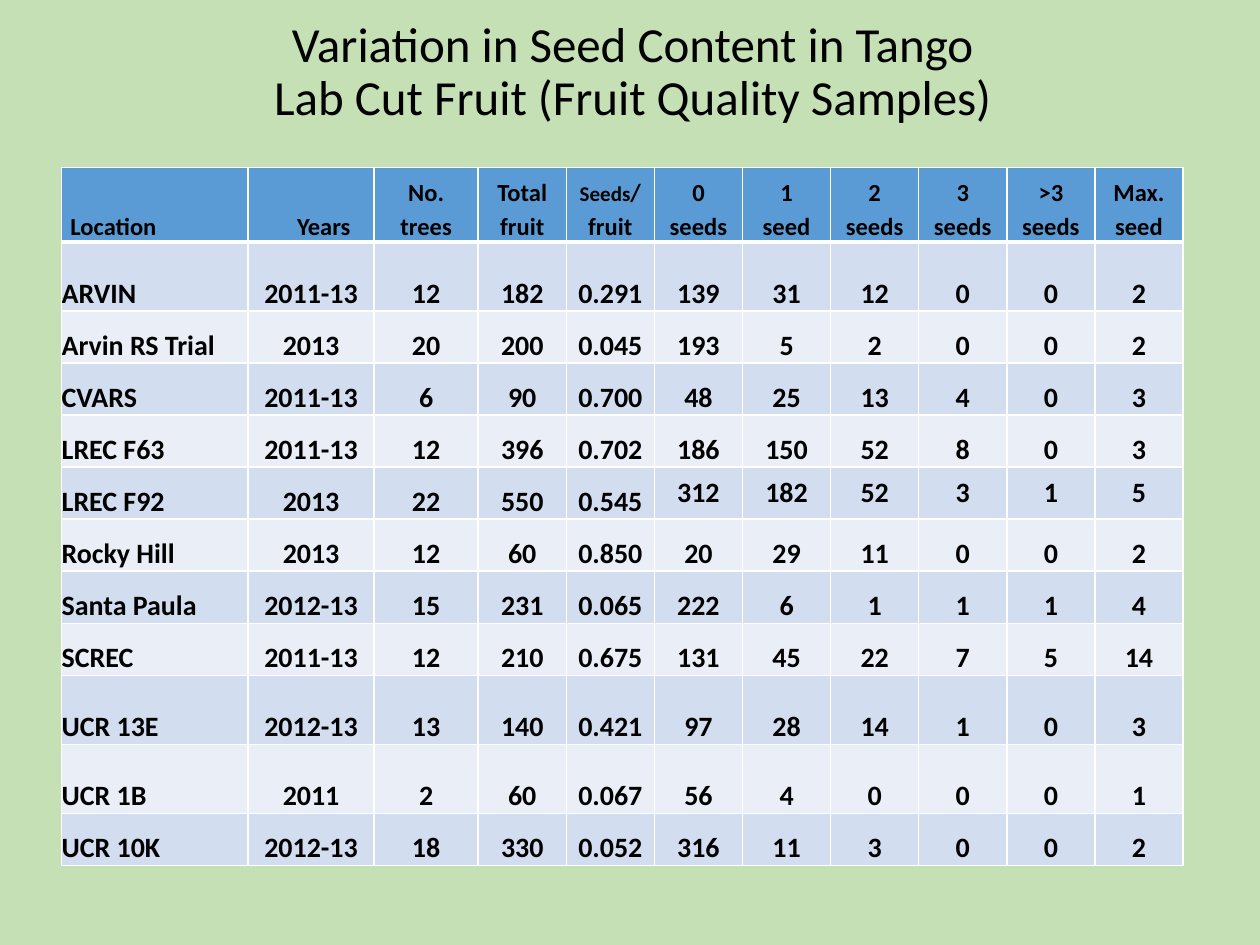
from dataclasses import dataclass

from lxml import etree
from pptx import Presentation
from pptx.dml.color import RGBColor
from pptx.enum.text import MSO_ANCHOR, MSO_AUTO_SIZE, PP_ALIGN
from pptx.oxml.ns import qn
from pptx.util import Pt

BOTTOM, MIDDLE = MSO_ANCHOR.BOTTOM, MSO_ANCHOR.MIDDLE
LEFT, CENTER = PP_ALIGN.LEFT, PP_ALIGN.CENTER
NO_AUTOFIT = MSO_AUTO_SIZE.NONE
TITLE_ONLY = 5


@dataclass(frozen=True)
class Theme:
    font: str = "Calibri"
    background: str = "C5E0B4"
    text: str = "000000"
    header: str = "5B9BD5"
    bands: tuple = ("D2DEEF", "EAEFF7")
    border: str = "FFFFFF"
    title_size: int = 28
    header_size: int = 14
    small_header_size: int = 12
    body_size: int = 16


THEME = Theme()

TITLE = "Variation in Seed Content in Tango\nLab Cut Fruit (Fruit Quality Samples)"
HEADERS = [
    "Location", "Years", "No. trees", "Total\nfruit", "Seeds/\nfruit", "0 seeds",
    "1\nseed", "2 seeds", "3 seeds", ">3 seeds", "Max. seed",
]
SAMPLES = [
    ("ARVIN", "2011-13", "12", "182", "0.291", "139", "31", "12", "0", "0", "2"),
    ("Arvin RS Trial", "2013", "20", "200", "0.045", "193", "5", "2", "0", "0", "2"),
    ("CVARS", "2011-13", "6", "90", "0.700", "48", "25", "13", "4", "0", "3"),
    ("LREC F63", "2011-13", "12", "396", "0.702", "186", "150", "52", "8", "0", "3"),
    ("LREC F92", "2013", "22", "550", "0.545", "312", "182", "52", "3", "1", "5"),
    ("Rocky Hill", "2013", "12", "60", "0.850", "20", "29", "11", "0", "0", "2"),
    ("Santa Paula", "2012-13", "15", "231", "0.065", "222", "6", "1", "1", "1", "4"),
    ("SCREC", "2011-13", "12", "210", "0.675", "131", "45", "22", "7", "5", "14"),
    ("UCR 13E", "2012-13", "13", "140", "0.421", "97", "28", "14", "1", "0", "3"),
    ("UCR 1B", "2011", "2", "60", "0.067", "56", "4", "0", "0", "0", "1"),
    ("UCR 10K", "2012-13", "18", "330", "0.052", "316", "11", "3", "0", "0", "2"),
]
COLUMN_WIDTHS = [106.5, 72, 59.5] + [50.35] * 8
HEADER_HEIGHT, ROW_HEIGHT, TALL_ROW_HEIGHT = 42.5, 29.75, 39.5
TALL_LOCATIONS = {"ARVIN", "UCR 13E", "UCR 1B"}
MIDDLE_LOCATION, FIRST_COUNT_COLUMN = "LREC F92", 5
YEARS_INDENT = 23


def add_text(paragraph, text, size, bold=False):
    """Add runs to the paragraph, with a line break at each newline."""
    for number, line in enumerate(text.split("\n")):
        if number:
            paragraph.add_line_break()
        if not line:
            continue
        run = paragraph.add_run()
        run.text = line
        run.font.name = THEME.font
        run.font.size = Pt(size)
        run.font.bold = bold
        run.font.color.rgb = RGBColor.from_string(THEME.text)


def add_title(slide):
    title = slide.shapes.title
    title.left, title.top, title.width, title.height = Pt(51), Pt(0), Pt(621), Pt(83.5)
    frame = title.text_frame
    frame.auto_size = NO_AUTOFIT
    frame.word_wrap = True
    frame.vertical_anchor = MIDDLE
    paragraph = frame.paragraphs[0]
    paragraph.alignment = CENTER
    paragraph.line_spacing = 0.9
    add_text(paragraph, TITLE, THEME.title_size)


def set_borders(cell, top=1, bottom=1):
    properties = cell._tc.get_or_add_tcPr()
    widths = {"lnL": 1, "lnR": 1, "lnT": top, "lnB": bottom}
    for position, (side, width) in enumerate(widths.items()):
        line = etree.Element(qn(f"a:{side}"), w=str(Pt(width)))
        fill = etree.SubElement(line, qn("a:solidFill"))
        etree.SubElement(fill, qn("a:srgbClr"), val=THEME.border)
        properties.insert(position, line)


def format_cell(cell, fill, alignment, anchor=BOTTOM, side_margin=0):
    """Format the cell and return its paragraph."""
    cell.fill.solid()
    cell.fill.fore_color.rgb = RGBColor.from_string(fill)
    cell.vertical_anchor = anchor
    cell.margin_left = cell.margin_right = Pt(side_margin)
    cell.margin_top = cell.margin_bottom = Pt(0)
    paragraph = cell.text_frame.paragraphs[0]
    paragraph.alignment = alignment
    return paragraph


def fill_header(table):
    for column, label in enumerate(HEADERS):
        cell = table.cell(0, column)
        alignment = LEFT if column < 2 else CENTER
        paragraph = format_cell(cell, THEME.header, alignment, side_margin=5)
        paragraph.line_spacing = 1.15
        if label == "Years":
            paragraph._p.get_or_add_pPr().set("marL", str(Pt(YEARS_INDENT)))
        if label.startswith("Seeds"):
            add_text(paragraph, "Seeds", THEME.small_header_size, bold=True)
            label = label.removeprefix("Seeds")
        add_text(paragraph, label, THEME.header_size, bold=True)
        set_borders(cell, bottom=3)


def fill_samples(table):
    for row, sample in enumerate(SAMPLES, start=1):
        location = sample[0]
        band = THEME.bands[(row - 1) % 2]
        for column, value in enumerate(sample):
            cell = table.cell(row, column)
            centred = location == MIDDLE_LOCATION and column >= FIRST_COUNT_COLUMN
            paragraph = format_cell(
                cell, band, CENTER if column else LEFT, MIDDLE if centred else BOTTOM
            )
            add_text(paragraph, value, THEME.body_size, bold=True)
            set_borders(cell, top=3 if row == 1 else 1)


def add_seed_table(slide):
    heights = [HEADER_HEIGHT] + [
        TALL_ROW_HEIGHT if sample[0] in TALL_LOCATIONS else ROW_HEIGHT
        for sample in SAMPLES
    ]
    table = slide.shapes.add_table(
        len(heights), len(HEADERS), Pt(35.25), Pt(95.75),
        Pt(sum(COLUMN_WIDTHS)), Pt(sum(heights)),
    ).table
    for column, width in zip(table.columns, COLUMN_WIDTHS):
        column.width = Pt(width)
    for row, height in zip(table.rows, heights):
        row.height = Pt(height)
    fill_header(table)
    fill_samples(table)


def main():
    presentation = Presentation()
    presentation.slide_width, presentation.slide_height = Pt(720), Pt(540)
    slide = presentation.slides.add_slide(presentation.slide_layouts[TITLE_ONLY])
    slide.background.fill.solid()
    slide.background.fill.fore_color.rgb = RGBColor.from_string(THEME.background)
    add_title(slide)
    add_seed_table(slide)
    presentation.save("out.pptx")


if __name__ == "__main__":
    main()
